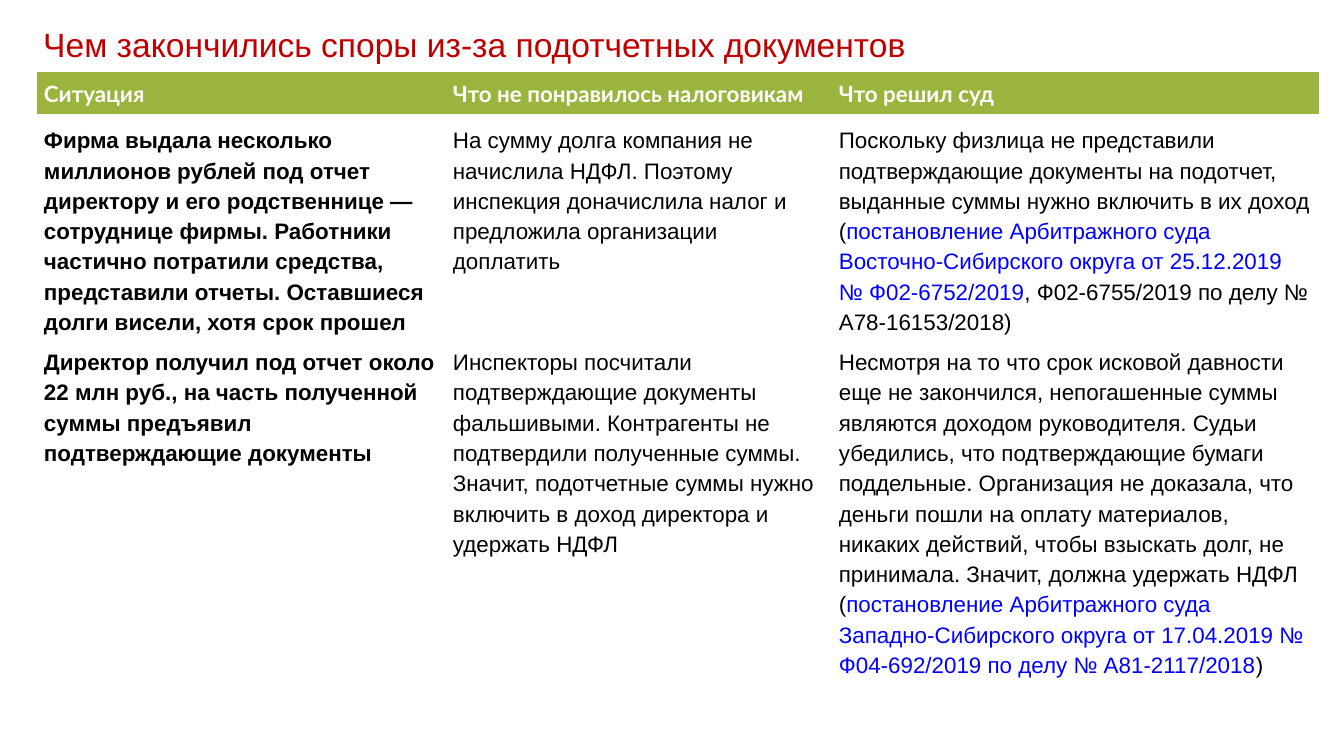
import dataclasses

import pptx
import pptx.dml.color
import pptx.enum.text
import pptx.oxml.ns
import pptx.presentation
import pptx.slide
import pptx.table
import pptx.util

EMU_PER_PX = 914400 / 134.4
NO_STYLE_NO_GRID = "{2D5ABB26-0587-4C30-8999-92F81FD0307C}"
COLORS = {
    "title": "C00000",
    "header": "9BB43E",
    "header_text": "FFFFFF",
    "text": "000000",
    "reference": "0000FF",
}
COLUMN_WIDTHS = (409, 386, 487)
ROW_HEIGHTS = (40, 145, 242)


@dataclasses.dataclass(frozen=True)
class CellStyle:
    font: str
    color: str
    bold: bool
    anchor: pptx.enum.text.MSO_ANCHOR
    margin_top: int
    margin_bottom: int
    fill: str | None = None


@dataclasses.dataclass(frozen=True)
class Dispute:
    situation: str
    claim: str
    ruling: str
    reference: str
    ending: str


TOP = pptx.enum.text.MSO_ANCHOR.TOP
MIDDLE = pptx.enum.text.MSO_ANCHOR.MIDDLE
HEADER = CellStyle("Lato", "header_text", True, MIDDLE, 5, 7, "header")
SITUATION = CellStyle("Arial", "text", True, TOP, 9, 1)
BODY = dataclasses.replace(SITUATION, bold=False)

HEADINGS = ("Ситуация", "Что не понравилось налоговикам", "Что решил суд")
DISPUTES = (
    Dispute(
        "Фирма выдала несколько миллионов рублей под отчет директору и его родственнице — "
        "сотруднице фирмы. Работники частично потратили средства, представили отчеты. "
        "Оставшиеся долги висели, хотя срок прошел",
        "На сумму долга компания не начислила НДФЛ. Поэтому инспекция доначислила налог "
        "и предложила организации доплатить",
        "Поскольку физлица не представили подтверждающие документы на подотчет, "
        "выданные суммы нужно включить в их доход (",
        "постановление Арбитражного суда Восточно-Сибирского округа от 25.12.2019 "
        "№ Ф02-6752/2019",
        ", Ф02-6755/2019 по делу № А78-16153/2018)",
    ),
    Dispute(
        "Директор получил под отчет около 22 млн руб., на часть полученной суммы "
        "предъявил подтверждающие документы",
        "Инспекторы посчитали подтверждающие документы фальшивыми. Контрагенты "
        "не подтвердили полученные суммы. Значит, подотчетные суммы нужно включить "
        "в доход директора и удержать НДФЛ",
        "Несмотря на то что срок исковой давности еще не закончился, непогашенные суммы "
        "являются доходом руководителя. Судьи убедились, что подтверждающие бумаги "
        "поддельные. Организация не доказала, что деньги пошли на оплату материалов, "
        "никаких действий, чтобы взыскать долг, не принимала. Значит, должна удержать НДФЛ (",
        "постановление Арбитражного суда Западно-Сибирского округа от 17.04.2019 "
        "№ Ф04-692/2019 по делу № А81-2117/2018",
        ")",
    ),
)


def px(length: int) -> pptx.util.Emu:
    return pptx.util.Emu(round(length * EMU_PER_PX))


def rgb(name: str) -> pptx.dml.color.RGBColor:
    return pptx.dml.color.RGBColor.from_string(COLORS[name])


def add_title(slide: pptx.slide.Slide, text: str) -> None:
    frame = slide.shapes.add_textbox(px(30), px(28), px(1314), px(43)).text_frame
    frame.word_wrap = True
    frame.vertical_anchor = pptx.enum.text.MSO_ANCHOR.BOTTOM
    paragraph = frame.paragraphs[0]
    paragraph.text = text
    paragraph.font.name = "Arial"
    paragraph.font.size = pptx.util.Pt(18)
    paragraph.font.color.rgb = rgb("title")


def fill_cell(cell: pptx.table._Cell, style: CellStyle, text: str,
              reference: str = "", ending: str = "") -> None:
    """Write the text, with an optional coloured reference and its ending."""
    cell.vertical_anchor = style.anchor
    cell.margin_left = cell.margin_right = px(7)
    cell.margin_top = px(style.margin_top)
    cell.margin_bottom = px(style.margin_bottom)
    if style.fill:
        cell.fill.solid()
        cell.fill.fore_color.rgb = rgb(style.fill)
    else:
        cell.fill.background()

    paragraph = cell.text_frame.paragraphs[0]
    paragraph.line_spacing = pptx.util.Pt(16.2)
    paragraph.font.name = style.font
    paragraph.font.size = pptx.util.Pt(12)
    paragraph.font.bold = style.bold
    paragraph.font.color.rgb = rgb(style.color)
    paragraph.add_run().text = text
    if reference:
        run = paragraph.add_run()
        run.text = reference
        run.font.color.rgb = rgb("reference")
        paragraph.add_run().text = ending


def add_disputes_table(slide: pptx.slide.Slide) -> None:
    frame = slide.shapes.add_table(
        len(ROW_HEIGHTS), len(COLUMN_WIDTHS), px(37), px(72),
        px(sum(COLUMN_WIDTHS)), px(sum(ROW_HEIGHTS)))
    style_id = frame.element.find(".//" + pptx.oxml.ns.qn("a:tableStyleId"))
    style_id.text = NO_STYLE_NO_GRID
    table = frame.table
    table.horz_banding = False
    for column, width in zip(table.columns, COLUMN_WIDTHS):
        column.width = px(width)
    for row, height in zip(table.rows, ROW_HEIGHTS):
        row.height = px(height)

    for index, heading in enumerate(HEADINGS):
        fill_cell(table.cell(0, index), HEADER, heading)
    for index, dispute in enumerate(DISPUTES, start=1):
        fill_cell(table.cell(index, 0), SITUATION, dispute.situation)
        fill_cell(table.cell(index, 1), BODY, dispute.claim)
        fill_cell(table.cell(index, 2), BODY, dispute.ruling,
                  dispute.reference, dispute.ending)


def main() -> None:
    presentation = pptx.Presentation()
    presentation.slide_width = px(1344)
    presentation.slide_height = px(756)
    slide = presentation.slides.add_slide(presentation.slide_layouts[6])
    add_title(slide, "Чем закончились споры из-за подотчетных документов")
    add_disputes_table(slide)
    presentation.save("out.pptx")


if __name__ == "__main__":
    main()
